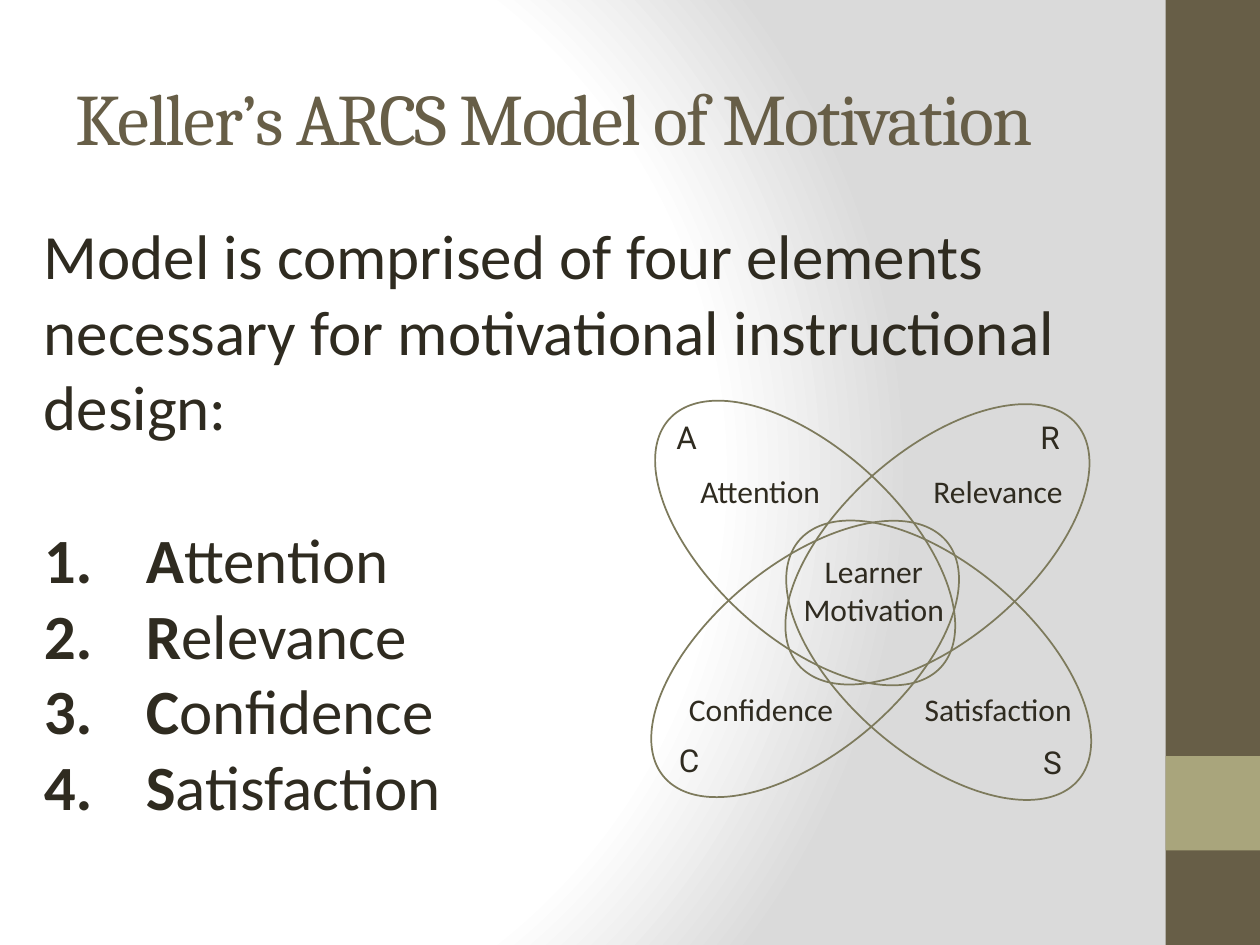
from dataclasses import dataclass

from lxml.etree import SubElement
from pptx import Presentation
from pptx.dml.color import RGBColor
from pptx.enum.shapes import MSO_SHAPE
from pptx.enum.text import MSO_ANCHOR, MSO_AUTO_SIZE, PP_ALIGN
from pptx.oxml import parse_xml
from pptx.oxml.ns import nsdecls, qn
from pptx.util import Inches, Pt


@dataclass(frozen=True)
class Theme:
    brown: str = "675E47"
    olive: str = "A9A57C"
    outline: str = "7D7A5C"
    ink: str = "2F2B20"
    white: str = "FFFFFF"
    grey: str = "DADADA"
    title_font: str = "Cambria"
    body_font: str = "Calibri"
    letter_font: str = "Roboto"
    title_size: float = 41.4
    body_size: float = 36
    label_size: float = 18


@dataclass(frozen=True)
class Petal:
    left: float
    top: float
    rotation: float


@dataclass(frozen=True)
class Label:
    lines: tuple[str, ...]
    left: float
    top: float
    width: float
    height: float = 0.4
    font: str = "Calibri"
    alignment: PP_ALIGN = PP_ALIGN.LEFT


THEME = Theme()
ELEMENTS = ("Attention", "Relevance", "Confidence", "Satisfaction")
LIST_INDENT = 0.81
PETAL_WIDTH, PETAL_HEIGHT = 2.92, 1.5
PETALS = (
    Petal(4.93, 3.56, 42.4),
    Petal(5.99, 4.49, 40.7),
    Petal(5.98, 3.57, 319),
    Petal(4.93, 4.48, 320.3),
)
LABELS = (
    Label(("A",), 5.27, 3.27, 0.39, font=THEME.letter_font),
    Label(("Attention",), 5.46, 3.7, 1.17),
    Label(("R",), 8.16, 3.27, 0.37, font=THEME.letter_font),
    Label(("Relevance",), 7.31, 3.7, 1.24),
    Label(("C",), 5.29, 5.83, 0.36, font=THEME.letter_font),
    Label(("Confidence",), 5.37, 5.43, 1.36),
    Label(("Satisfaction",), 7.24, 5.43, 1.38),
    Label(("S",), 8.18, 5.85, 0.35, font=THEME.letter_font),
    Label(("Learner", "Motivation"), 6.27, 4.33, 1.33, 0.71,
          alignment=PP_ALIGN.CENTER),
)


def box(left: float, top: float, width: float, height: float) -> tuple:
    return tuple(Inches(value) for value in (left, top, width, height))


def add_run(paragraph, text: str, font: str, size: float, color: str,
            bold: bool = False):
    run = paragraph.add_run()
    run.text = text
    run.font.name = font
    run.font.size = Pt(size)
    run.font.bold = bold
    run.font.color.rgb = RGBColor.from_string(color)
    return run


def set_background(slide) -> None:
    """Fill the background with a circular gradient, white to grey."""
    slide.background.fill.solid()
    properties = slide.background.fill._xPr
    properties.replace(properties.find(qn("a:solidFill")), parse_xml(
        f'<a:gradFill {nsdecls("a")} rotWithShape="1"><a:gsLst>'
        f'<a:gs pos="0"><a:srgbClr val="{THEME.white}"/></a:gs>'
        f'<a:gs pos="75000"><a:srgbClr val="{THEME.white}"/></a:gs>'
        f'<a:gs pos="100000"><a:srgbClr val="{THEME.grey}"/></a:gs>'
        '</a:gsLst><a:path path="circle">'
        '<a:fillToRect l="20000" t="50000" r="100000" b="50000"/>'
        '</a:path></a:gradFill>'))


def add_band(slide, top: float, height: float, color: str) -> None:
    shape = slide.shapes.add_shape(MSO_SHAPE.RECTANGLE,
                                   *box(9.25, top, 0.75, height))
    shape.shadow.inherit = False
    shape.fill.solid()
    shape.fill.fore_color.rgb = RGBColor.from_string(color)
    shape.line.fill.background()


def add_title(slide, text: str) -> None:
    title = slide.shapes.title
    title.left, title.top, title.width, title.height = box(0.5, 0.3, 8.33, 1.25)
    frame = title.text_frame
    frame.vertical_anchor = MSO_ANCHOR.MIDDLE
    paragraph = frame.paragraphs[0]
    paragraph.alignment = PP_ALIGN.LEFT
    run = add_run(paragraph, text, THEME.title_font, THEME.title_size, THEME.brown)
    run.font._element.set("spc", "-100")


def number_paragraph(paragraph) -> None:
    properties = paragraph._p.get_or_add_pPr()
    properties.set("marL", str(Inches(LIST_INDENT)))
    properties.set("indent", str(-Inches(LIST_INDENT)))
    SubElement(properties, qn("a:buFont"), typeface="+mj-lt")
    SubElement(properties, qn("a:buAutoNum"), type="arabicPeriod")


def add_body(slide, introduction: str) -> None:
    frame = slide.shapes.add_textbox(*box(0.25, 1.67, 9.33, 4.95)).text_frame
    frame.word_wrap = True
    frame.auto_size = MSO_AUTO_SIZE.SHAPE_TO_FIT_TEXT
    style = (THEME.body_font, THEME.body_size, THEME.ink)
    add_run(frame.paragraphs[0], introduction, *style)
    for index, element in enumerate(ELEMENTS):
        paragraph = frame.add_paragraph()
        if index == 0:
            paragraph.space_before = Pt(44)
        number_paragraph(paragraph)
        add_run(paragraph, element[0], *style, bold=True)
        add_run(paragraph, element[1:], *style)


def add_petal(slide, petal: Petal) -> None:
    shape = slide.shapes.add_shape(
        MSO_SHAPE.OVAL, *box(petal.left, petal.top, PETAL_WIDTH, PETAL_HEIGHT))
    shape.rotation = petal.rotation
    shape.shadow.inherit = False
    shape.fill.background()
    shape.line.color.rgb = RGBColor.from_string(THEME.outline)
    shape.line.width = Pt(1)


def add_label(slide, label: Label) -> None:
    frame = slide.shapes.add_textbox(
        *box(label.left, label.top, label.width, label.height)).text_frame
    frame.word_wrap = False
    frame.auto_size = MSO_AUTO_SIZE.SHAPE_TO_FIT_TEXT
    for index, line in enumerate(label.lines):
        paragraph = frame.add_paragraph() if index else frame.paragraphs[0]
        paragraph.alignment = label.alignment
        add_run(paragraph, line, label.font, THEME.label_size, THEME.ink)


def main() -> None:
    presentation = Presentation()
    presentation.slide_width, presentation.slide_height = Inches(10), Inches(7.5)
    slide = presentation.slides.add_slide(presentation.slide_layouts[5])

    # Background and side band
    set_background(slide)
    add_band(slide, 0, 7.5, THEME.brown)
    add_band(slide, 6, 0.75, THEME.olive)

    # Title and numbered list
    add_title(slide, "Keller’s ARCS Model of Motivation")
    add_body(slide, "Model is comprised of four elements necessary for "
                    "motivational instructional design:")

    # Overlapping ellipses and their labels
    for petal in PETALS:
        add_petal(slide, petal)
    for label in LABELS:
        add_label(slide, label)

    presentation.save("out.pptx")


if __name__ == "__main__":
    main()
